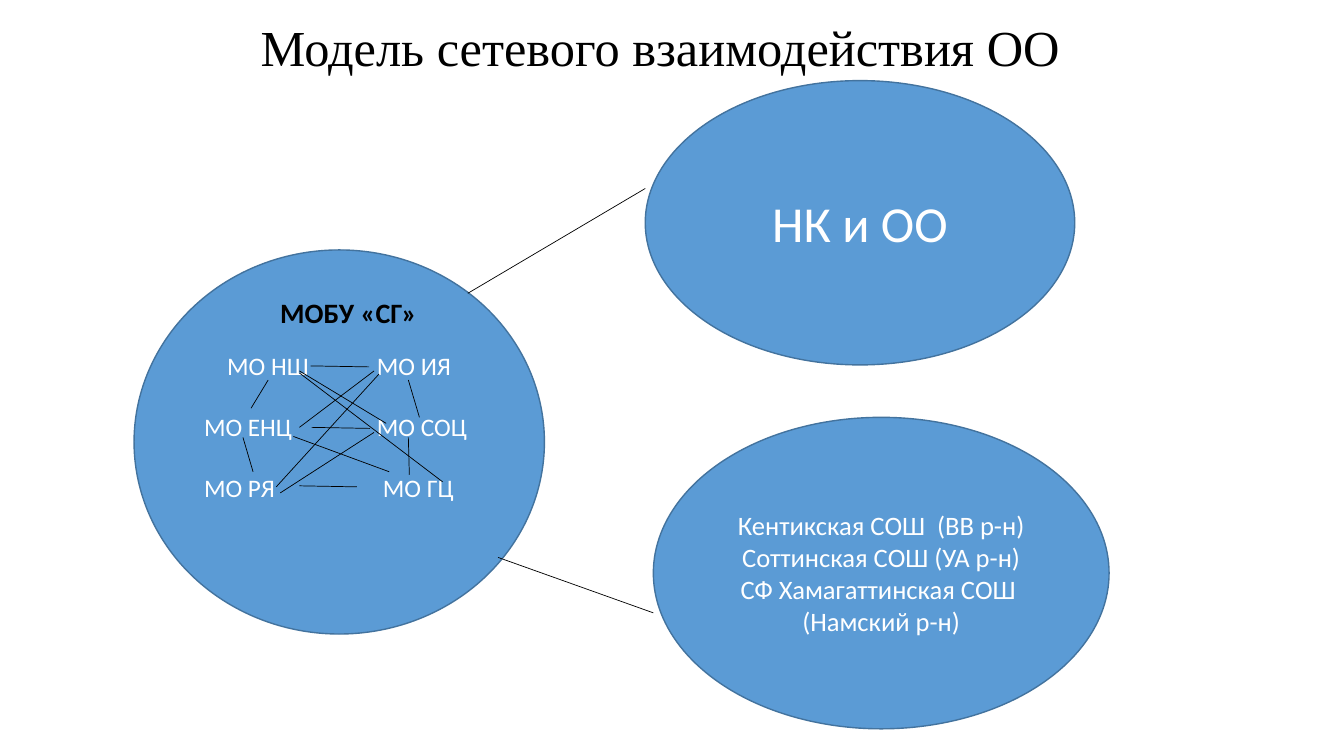
"""Build the slide showing the network cooperation model of schools."""
import pptx
import pptx.util
import pptx.dml.color
import pptx.enum.shapes
import pptx.enum.text
import pptx.oxml.ns
from lxml import etree

PX = 9144
ALIGN = pptx.enum.text.PP_ALIGN
THEME = {
    "fill": "5B9BD5", "outline": "43739E", "ink": "000000", "light": "FFFFFF",
    "heading": "Times New Roman", "body": "Calibri",
    "title": 36, "large": 36, "name": 20, "schools": 19, "units": 18,
}


def color(name):
    return pptx.dml.color.RGBColor.from_string(THEME[name])


def write(shape, lines, size, ink="light", face="body", align=ALIGN.CENTER):
    frame = shape.text_frame
    frame.word_wrap = True
    frame.vertical_anchor = pptx.enum.text.MSO_ANCHOR.MIDDLE
    frame.text = "\n".join(lines)
    for paragraph in frame.paragraphs:
        paragraph.alignment = align
        paragraph.font.size = pptx.util.Pt(THEME[size])
        paragraph.font.name = THEME[face]
        paragraph.font.color.rgb = color(ink)


presentation = pptx.Presentation()
presentation.slide_width = pptx.util.Inches(13.33)
presentation.slide_height = pptx.util.Inches(7.5)
slide = presentation.slides.add_slide(presentation.slide_layouts[6])

title = slide.shapes.add_textbox(80 * PX, 14 * PX, 1150 * PX, 72 * PX)
write(title, ["Модель сетевого взаимодействия ОО"], "title", "ink", "heading")
title.text_frame.paragraphs[0].line_spacing = 0.9

ellipses = [
    ((133, 248, 407, 381), ["МО НШ", "МО ЕНЦ", "МО РЯ"], "units", ALIGN.LEFT),
    ((640, 80, 426, 282), ["НК и ОО"], "large", ALIGN.CENTER),
    ((648, 414, 452, 309), ["Кентикская СОШ  (ВВ р-н)", "Соттинская СОШ (УА р-н)",
                            "СФ Хамагаттинская СОШ  (Намский р-н)"], "schools", ALIGN.CENTER),
]
shapes = []
for box, lines, size, align in ellipses:
    shape = slide.shapes.add_shape(
        pptx.enum.shapes.MSO_SHAPE.OVAL, *(length * PX for length in box))
    shape.shadow.inherit = False
    shape.fill.solid()
    shape.fill.fore_color.rgb = color("fill")
    shape.line.color.rgb = color("outline")
    shape.line.width = pptx.util.Pt(1)
    write(shape, lines, size, align=align)
    shapes.append(shape)

right_units = slide.shapes.add_textbox(364 * PX, 304 * PX, 120 * PX, 269 * PX)
write(right_units, ["МО ИЯ", "МО СОЦ", "МО ГЦ"], "units", align=ALIGN.LEFT)

for column, indents in ((shapes[0], (23, 0, 0)), (right_units, (0, 0, 6))):
    column.text_frame.margin_bottom = 36 * PX
    for paragraph, indent in zip(column.text_frame.paragraphs, indents):
        properties = paragraph._p.get_or_add_pPr()
        properties.set("marL", "0")
        properties.set("indent", str(indent * PX))
    for paragraph in column.text_frame.paragraphs[1:]:
        paragraph.space_before = pptx.util.Pt(22)

unit_links = [
    (308, 363, 366, 364), (297, 482, 354, 483), (309, 424, 367, 425),
    (405, 377, 416, 414), (249, 405, 266, 377), (405, 434, 406, 471),
    (251, 468, 241, 434), (297, 424, 371, 368), (297, 368, 383, 420),
    (278, 489, 371, 429), (291, 433, 386, 468), (297, 370, 439, 478),
    (274, 483, 376, 371),
]
partner_links = [(464, 291, 640, 187), (494, 553, 648, 608)]
for ends in unit_links + partner_links:
    connector = slide.shapes.add_connector(
        pptx.enum.shapes.MSO_CONNECTOR.STRAIGHT, *(length * PX for length in ends))
    connector.line.color.rgb = color("ink")
    connector.line.width = pptx.util.Pt(0.5)
    etree.SubElement(connector._element.spPr, pptx.oxml.ns.qn("a:effectLst"))

name = slide.shapes.add_textbox(268 * PX, 288 * PX, 157 * PX, 44 * PX)
write(name, ["МОБУ «СГ»"], "name", "ink", align=ALIGN.LEFT)
name.text_frame.word_wrap = False
name.text_frame.paragraphs[0].font.bold = True

presentation.save("out.pptx")
